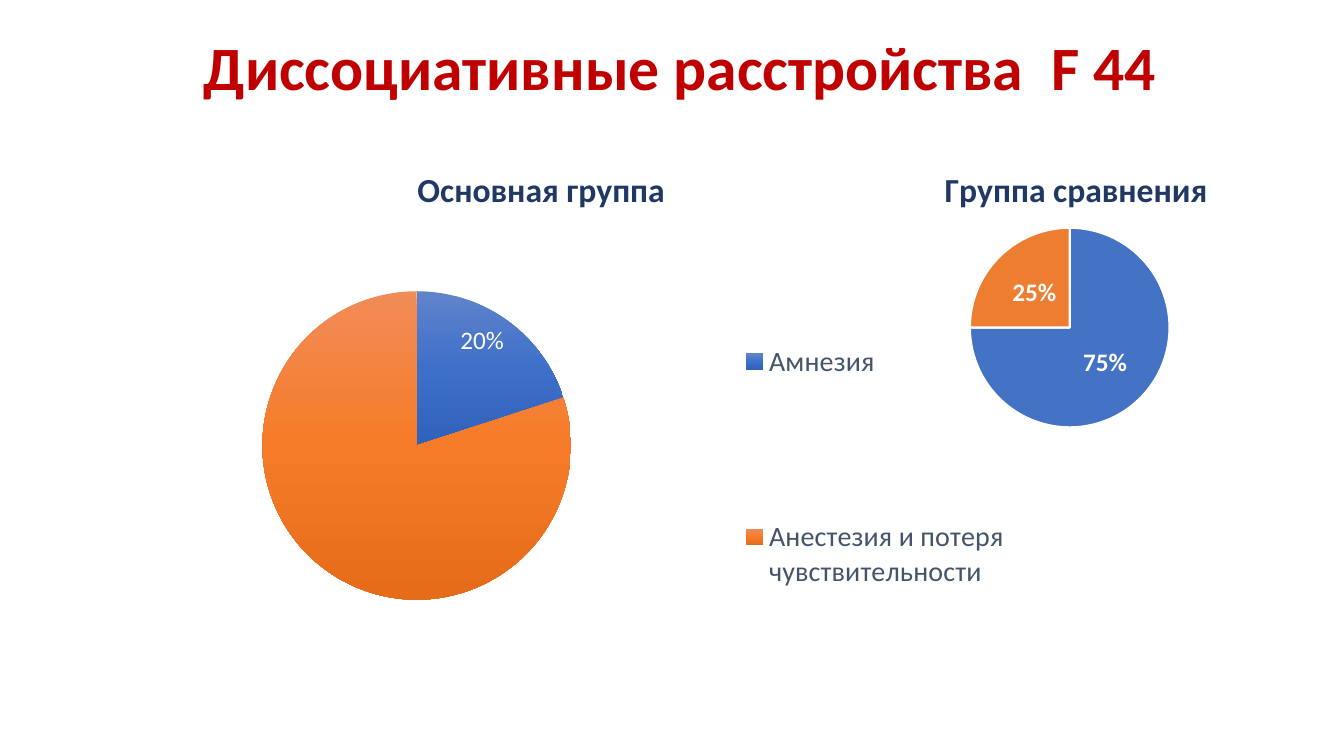
from lxml import etree
from pptx import Presentation
from pptx.chart.data import CategoryChartData
from pptx.dml.color import RGBColor
from pptx.enum.chart import XL_CHART_TYPE as ChartType
from pptx.enum.chart import XL_LABEL_POSITION as LabelPosition
from pptx.enum.chart import XL_LEGEND_POSITION as LegendPosition
from pptx.enum.text import MSO_ANCHOR, PP_ALIGN
from pptx.oxml import parse_xml
from pptx.oxml.ns import nsdecls, qn
from pptx.util import Inches, Pt

FONT = "Calibri"
RED = RGBColor(0xC0, 0x00, 0x00)
NAVY = RGBColor(0x20, 0x38, 0x64)
SLATE = RGBColor(0x44, 0x54, 0x6A)
WHITE = RGBColor(0xFF, 0xFF, 0xFF)
BLUE = RGBColor(0x44, 0x72, 0xC4)
ORANGE = RGBColor(0xED, 0x7D, 0x31)
BLUE_SHADES = [RGBColor(0x61, 0x83, 0xCB), RGBColor(0x3E, 0x70, 0xCA), RGBColor(0x30, 0x62, 0xBB)]
ORANGE_SHADES = [RGBColor(0xF1, 0x8C, 0x57), RGBColor(0xF6, 0x7B, 0x28), RGBColor(0xE5, 0x6C, 0x19)]


def format_font(font, size, color, bold=False):
    """Set typeface, size, weight and colour of a font."""
    for name, value in {"name": FONT, "size": Pt(size), "bold": bold}.items():
        setattr(font, name, value)
    font.color.rgb = color


def place_in_chart(element, inner=False, **shares):
    """Lay out a chart part at the given shares of the chart's size."""
    for old in element.findall(qn("c:layout")):
        element.remove(old)
    overlay = element.find(qn("c:overlay"))
    layout = etree.Element(qn("c:layout"))
    element.insert(0 if overlay is None else element.index(overlay), layout)
    manual = etree.SubElement(layout, qn("c:manualLayout"))
    modes = {f"{side}Mode": "edge" for side in "xy"}
    target = {"layoutTarget": "inner"} if inner else {}
    for tag, value in {**target, **modes, **shares}.items():
        etree.SubElement(manual, qn(f"c:{tag}")).set("val", str(value))


def fill_gradient(point, shades):
    """Fill a pie slice with evenly spaced shades from top to bottom."""
    step = 100000 // (len(shades) - 1)
    stops = "".join(f'<a:gs pos="{index * step}"><a:srgbClr val="{shade}"/></a:gs>'
                    for index, shade in enumerate(shades))
    point.format.fill.background()
    properties = point.format.fill._xPr
    properties.replace(properties.find(qn("a:noFill")), parse_xml(
        f'<a:gradFill {nsdecls("a")} rotWithShape="1"><a:gsLst>{stops}</a:gsLst>'
        '<a:lin ang="5400000" scaled="0"/></a:gradFill>'))


def add_pie(slide, box, title, title_place, plot_place, categories, values, bold_labels):
    """Add a titled pie with percent labels in a box and return its chart."""
    data = CategoryChartData()
    data.categories = categories
    data.add_series("Series 1", values)
    frame = slide.shapes.add_chart(ChartType.PIE, *map(Inches, box), data)
    chart = frame.chart
    chart.font.name, chart.font.size = FONT, Pt(10)
    chart.has_legend = False
    chart.has_title = True
    heading = chart.chart_title
    heading.text_frame.text = title
    format_font(heading.text_frame.paragraphs[0].runs[0].font, 24, NAVY, True)
    heading.include_in_layout = False
    place_in_chart(heading._element, **title_place)
    plot = chart.plots[0]
    plot.vary_by_categories = True
    place_in_chart(chart._chartSpace.chart.plotArea, inner=True, **plot_place)
    plot.has_data_labels = True
    labels = plot.data_labels
    settings = {"show_percentage": True, "show_value": False,
                "number_format": "0%", "number_format_is_linked": False,
                "position": LabelPosition.CENTER}
    for name, value in settings.items():
        setattr(labels, name, value)
    format_font(labels.font, 18, WHITE, bold_labels)
    return chart


def add_title(slide, box, text):
    """Move and format the title placeholder."""
    title = slide.shapes.title
    for name, value in zip(("left", "top", "width", "height"), box):
        setattr(title, name, Inches(value))
    frame = title.text_frame
    frame.text = text
    frame.vertical_anchor = MSO_ANCHOR.MIDDLE
    paragraph = frame.paragraphs[0]
    paragraph.alignment = PP_ALIGN.CENTER
    paragraph.line_spacing = 0.9
    format_font(paragraph.runs[0].font, 44, RED, True)


def add_main_group(slide, box):
    """Add the large pie with gradient slices and a legend."""
    chart = add_pie(slide, box, "Основная группа", {"x": 0.38, "y": 0.05},
                    {"x": 0.02, "y": 0.265, "w": 0.73, "h": 0.51},
                    ["Амнезия", "Анестезия и потеря чувствительности"], [20, 80], False)
    points = chart.plots[0].series[0].points
    for index, shades in enumerate([BLUE_SHADES, ORANGE_SHADES]):
        fill_gradient(points[index], shades)
        points[index].format.line.fill.background()
    small_label = points[0].data_label
    format_font(small_label.font, 18, WHITE)
    small_label.position = LabelPosition.INSIDE_END
    for tag, shown in {"showVal": "0", "showCatName": "0", "showPercent": "1"}.items():
        small_label._dLbl.find(qn(f"c:{tag}")).set("val", shown)
    chart.has_legend = True
    legend = chart.legend
    legend.position = LegendPosition.RIGHT
    legend.include_in_layout = False
    format_font(legend.font, 20, SLATE)
    place_in_chart(legend._element, x=0.68, y=0.12, w=0.28, h=0.87)


def add_comparison_group(slide, box):
    """Add the small pie with flat slices parted by white lines."""
    chart = add_pie(slide, box, "Группа сравнения", {"x": 0.24, "y": 0.07},
                    {"x": 0.3, "y": 0.29, "w": 0.4, "h": 0.66}, ["1", "2"], [75, 25], True)
    for index, color in enumerate([BLUE, ORANGE]):
        style = chart.plots[0].series[0].points[index].format
        style.fill.solid()
        style.fill.fore_color.rgb = color
        style.line.color.rgb = WHITE
        style.line.width = Pt(1.5)


def main():
    """Build and save the slide."""
    presentation = Presentation()
    presentation.slide_width, presentation.slide_height = Inches(13.33), Inches(7.5)
    slide = presentation.slides.add_slide(presentation.slide_layouts[5])
    add_title(slide, (1, 0.31, 11.5, 0.79), "Диссоциативные расстройства  F 44")
    add_main_group(slide, (0.11, 1.3, 10.45, 6))
    add_comparison_group(slide, (8.11, 1.39, 5, 3))
    presentation.save("out.pptx")


if __name__ == "__main__":
    main()
